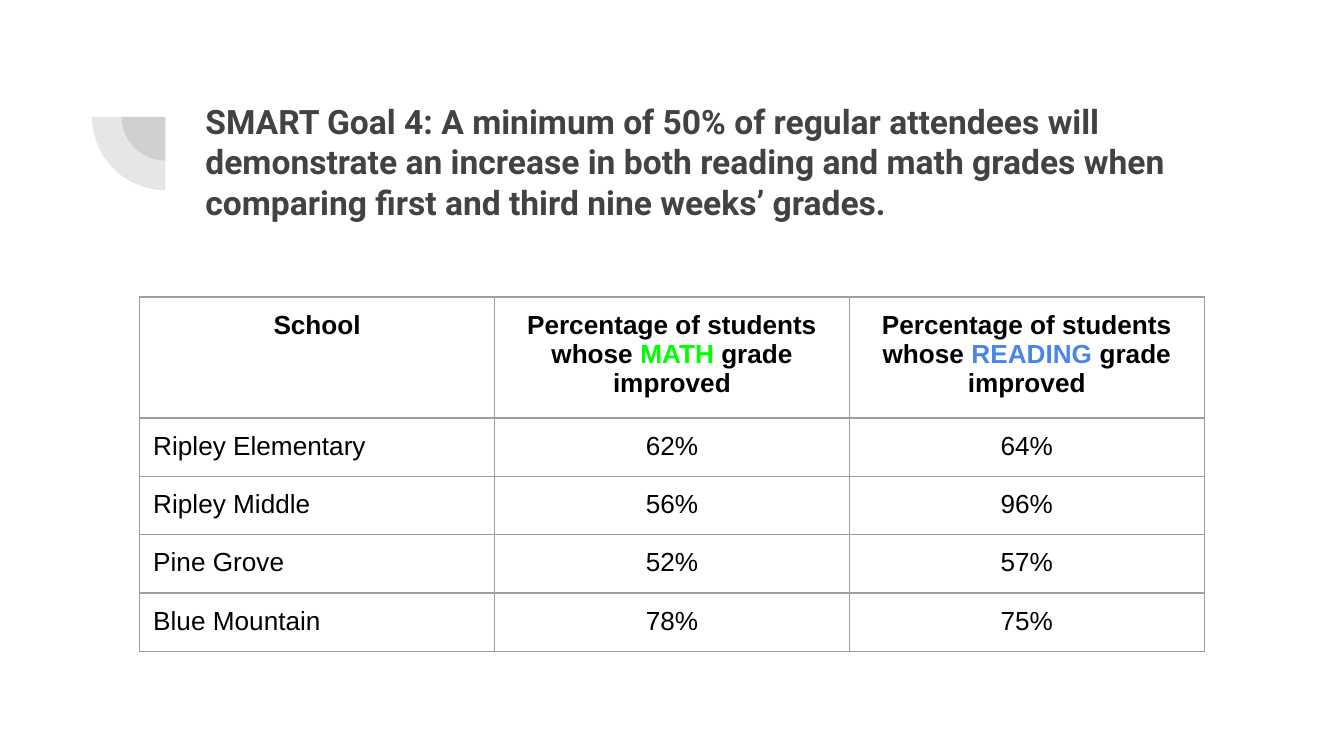
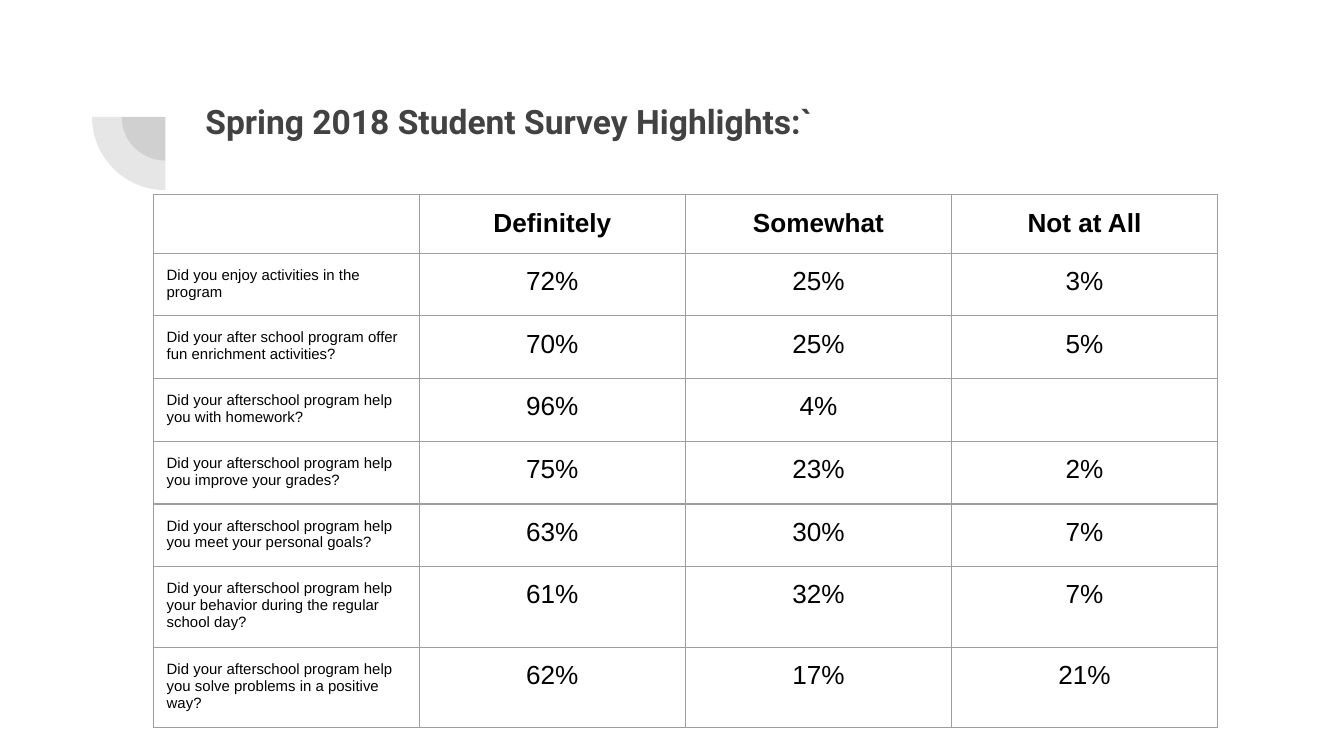
from lxml.etree import SubElement
from pptx import Presentation
from pptx.dml.color import RGBColor
from pptx.enum.shapes import MSO_SHAPE
from pptx.enum.text import MSO_ANCHOR, PP_ALIGN
from pptx.oxml.ns import qn
from pptx.util import Inches, Pt

CHARCOAL = RGBColor(0x42, 0x42, 0x42)
BLACK = RGBColor(0x00, 0x00, 0x00)
MATH_GREEN = RGBColor(0x00, 0xFF, 0x00)
READING_BLUE = RGBColor(0x4A, 0x86, 0xE8)
GRID_GRAY = RGBColor(0x9E, 0x9E, 0x9E)

TABLE_FONT = "Arial"
TABLE_WIDTH = 7.92
ROW_HEIGHT = 0.42
ARC_CENTER = (1.23, 0.87)
ARC_DIAMETERS = (0.65, 1.09)
ARC_OPACITY = 13

# Content: a cell is a list of (text, colour) runs or a plain string
goal_rows = [
    ["School",
     [("Percentage of students whose ", BLACK), ("MATH ", MATH_GREEN),
      ("grade improved", BLACK)],
     [("Percentage of students whose ", BLACK), ("READING", READING_BLUE),
      (" grade improved", BLACK)]],
    ["Ripley Elementary", "62%", "64%"],
    ["Ripley Middle", "56%", "96%"],
    ["Pine Grove", "52%", "57%"],
    ["Blue Mountain", "78%", "75%"],
]
survey_rows = [
    ["", "Definitely", "Somewhat", "Not at All"],
    ["Did you enjoy activities in the program", "72%", "25%", "3%"],
    ["Did your after school program offer fun enrichment activities?",
     "70%", "25%", "5%"],
    ["Did your afterschool program help you with homework?", "96%", "4%", ""],
    ["Did your afterschool program help you improve your grades?",
     "75%", "23%", "2%"],
    ["Did your afterschool program help you meet your personal goals?",
     "63%", "30%", "7%"],
    ["Did your afterschool program help your behavior during the regular school day?",
     "61%", "32%", "7%"],
    ["Did your afterschool program help you solve problems in a positive way?",
     "62%", "17%", "21%"],
]
# Title, table left and top, size of the row labels, rows
pages = [
    ("SMART Goal 4: A minimum of 50% of regular attendees will demonstrate an "
     "increase in both reading and math grades when comparing first and third "
     "nine weeks’ grades.", 1.04, 2.21, 14, goal_rows),
    ("Spring 2018 Student Survey Highlights:`", 1.14, 1.45, 8, survey_rows),
]


def add_run(paragraph, text, color, **font_format):
    run = paragraph.add_run()
    run.text = text
    run.font.color.rgb = color
    for attribute, value in font_format.items():
        setattr(run.font, attribute, value)


def style_cell(cell):
    margins = dict.fromkeys(
        ("margin_left", "margin_top", "margin_right", "margin_bottom"), Inches(0.1))
    for attribute, value in margins.items():
        setattr(cell, attribute, value)
    properties = cell._tc.get_or_add_tcPr()
    for side in ("a:lnL", "a:lnR", "a:lnT", "a:lnB"):
        border = SubElement(properties, qn(side), w=str(Pt(0.75)))
        fill = SubElement(border, qn("a:solidFill"))
        SubElement(fill, qn("a:srgbClr"), val=str(GRID_GRAY))
    cell.fill.background()


prs = Presentation()
prs.slide_width, prs.slide_height = Inches(10), Inches(10 * 9 / 16)

# Default font, which also sets the least height of table rows
for defaults in (prs.element, prs.slide_master.element):
    for latin in defaults.iter(qn("a:latin")):
        latin.set("typeface", TABLE_FONT)

for title, table_left, table_top, label_size, rows in pages:
    slide = prs.slides.add_slide(prs.slide_layouts[6])

    # Quarter-circle ornament
    for diameter in ARC_DIAMETERS:
        left, top = (Inches(center - diameter / 2) for center in ARC_CENTER)
        arc = slide.shapes.add_shape(
            MSO_SHAPE.PIE, left, top, Inches(diameter), Inches(diameter))
        arc.adjustments[0], arc.adjustments[1] = 108, 162
        arc.rotation = 270
        arc.shadow.inherit = False
        arc.line.fill.background()
        arc.fill.solid()
        arc.fill.fore_color.rgb = CHARCOAL
        tint = arc.fill._xPr.find(".//" + qn("a:srgbClr"))
        SubElement(tint, qn("a:alpha"), val=str(ARC_OPACITY * 1000))

    # Title
    heading = slide.shapes.add_textbox(
        Inches(1.43), Inches(0.65), Inches(7.69), Inches(1.09)).text_frame
    frame_format = {
        "word_wrap": True, "vertical_anchor": MSO_ANCHOR.TOP,
        "margin_left": Inches(0.1), "margin_right": Inches(0.1),
        "margin_top": Inches(0.1), "margin_bottom": Inches(0.1),
    }
    for attribute, value in frame_format.items():
        setattr(heading, attribute, value)
    add_run(heading.paragraphs[0], title, CHARCOAL,
            name="Roboto", size=Pt(18), bold=True)

    # Results table; rows grow to fit their text
    results = slide.shapes.add_table(
        len(rows), len(rows[0]), Inches(table_left), Inches(table_top),
        Inches(TABLE_WIDTH), Inches(ROW_HEIGHT * len(rows))).table
    results.first_row = results.horz_banding = False
    for row_index, row in enumerate(rows):
        for column_index, content in enumerate(row):
            cell = results.cell(row_index, column_index)
            style_cell(cell)
            paragraph = cell.text_frame.paragraphs[0]
            is_header = row_index == 0
            is_label = column_index == 0 and not is_header
            size = Pt(label_size if is_label else 14)
            paragraph.alignment = PP_ALIGN.LEFT if is_label else PP_ALIGN.CENTER
            paragraph.line_spacing = 1.0
            runs = [(content, BLACK)] if isinstance(content, str) else content
            for text, color in runs:
                if text:
                    add_run(paragraph, text, color,
                            name=TABLE_FONT, size=size, bold=is_header)
            # Keeps an empty cell from stretching its row
            ending = SubElement(paragraph._p, qn("a:endParaRPr"), sz=str(int(size.pt * 100)))
            SubElement(ending, qn("a:latin"), typeface=TABLE_FONT)

prs.save("out.pptx")
